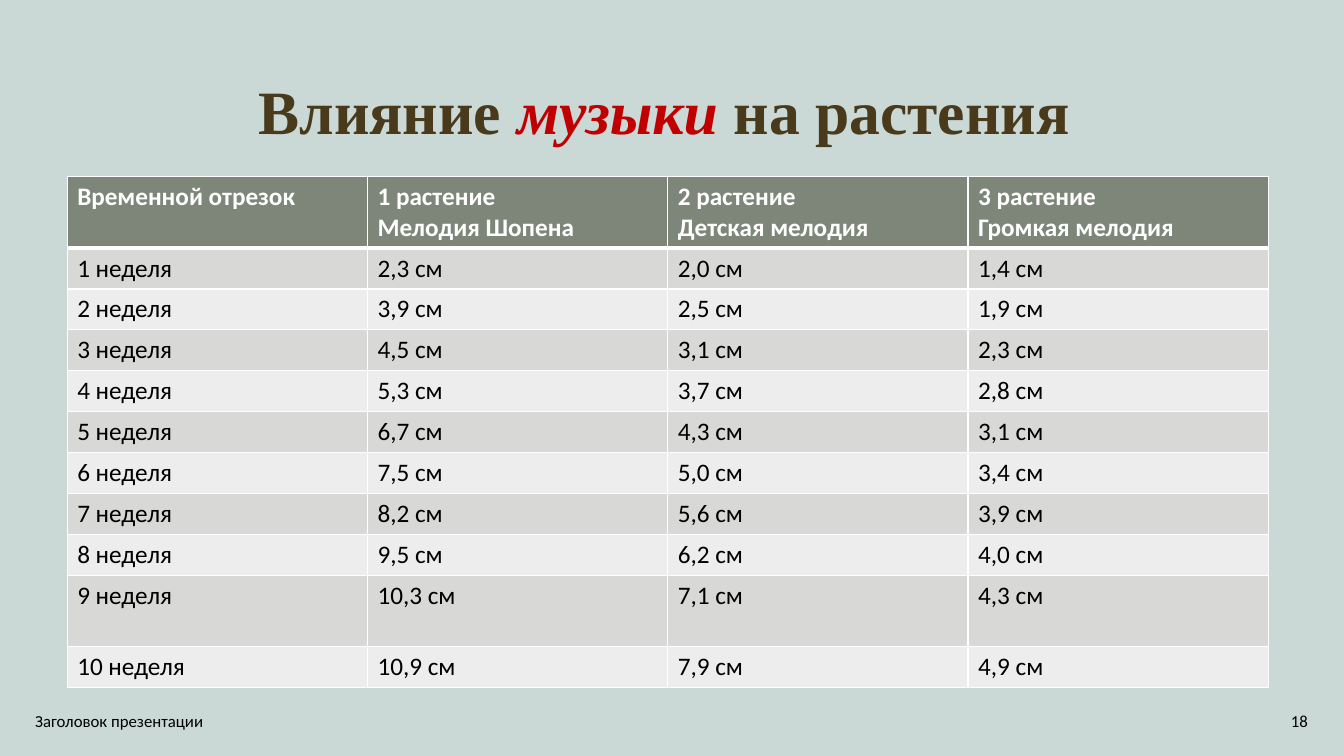
"""Build the slide about the influence of music on plant growth."""
import dataclasses

import lxml.etree
import pptx
import pptx.dml.color
import pptx.enum.text
import pptx.oxml.ns
import pptx.util

EMU_PER_PX = 9525
COLOURS = {
    "background": "CAD8D6",
    "title": "4A3A1C",
    "accent": "C00000",
    "header": "7E8679",
    "odd_row": "D8D9D7",
    "even_row": "ECEDEC",
    "white": "FFFFFF",
    "black": "000000",
}
ALIGN = pptx.enum.text.PP_ALIGN
MIDDLE = pptx.enum.text.MSO_ANCHOR.MIDDLE


@dataclasses.dataclass(frozen=True)
class Style:
    font: str
    size: int
    colour: str
    bold: bool = False
    italic: bool = False


@dataclasses.dataclass(frozen=True)
class Label:
    text: str
    left: int
    width: int
    align: ALIGN


TITLE = Style("Times New Roman", 44, "title", bold=True)
TITLE_SPANS = [
    ("Влияние ", TITLE),
    ("музыки ", dataclasses.replace(TITLE, colour="accent", italic=True)),
    ("на растения ", TITLE),
]
HEADER = Style("Calibri", 18, "white", bold=True)
BODY = Style("Calibri", 18, "black")
FOOTER = Style("Calibri", 12, "black")
LABELS = [
    Label("Заголовок презентации", 24, 432, ALIGN.LEFT),
    Label("18", 967, 288, ALIGN.RIGHT),
]
HEADINGS = [
    ["Временной отрезок"],
    ["1 растение", "Мелодия Шопена"],
    ["2 растение", "Детская мелодия"],
    ["3 растение", "Громкая мелодия"],
]
GROWTH = [
    ("2,3", "2,0", "1,4"),
    ("3,9", "2,5", "1,9"),
    ("4,5", "3,1", "2,3"),
    ("5,3", "3,7", "2,8"),
    ("6,7", "4,3", "3,1"),
    ("7,5", "5,0", "3,4"),
    ("8,2", "5,6", "3,9"),
    ("9,5", "6,2", "4,0"),
    ("10,3", "7,1", "4,3"),
    ("10,9", "7,9", "4,9"),
]
COLUMN_WIDTH = 286
ROW_HEIGHT = 39
TALL_ROW_HEIGHT = 68
TALL_ROWS = (0, 9)


def px(length: int) -> pptx.util.Emu:
    return pptx.util.Emu(length * EMU_PER_PX)


def rgb(name: str) -> pptx.dml.color.RGBColor:
    return pptx.dml.color.RGBColor.from_string(COLOURS[name])


def add_span(para, text: str, style: Style) -> None:
    span = para.add_run()
    span.text = text
    span.font.name = style.font
    span.font.size = pptx.util.Pt(style.size)
    span.font.bold = style.bold
    span.font.italic = style.italic
    span.font.color.rgb = rgb(style.colour)


def add_border(cell, side: str, points: int) -> None:
    qn = pptx.oxml.ns.qn
    line = lxml.etree.Element(qn(f"a:{side}"), w=str(pptx.util.Pt(points)))
    fill = lxml.etree.SubElement(line, qn("a:solidFill"))
    lxml.etree.SubElement(fill, qn("a:srgbClr"), val=COLOURS["white"])
    cell._tc.get_or_add_tcPr().append(line)


def fill_cell(cell, lines: list[str], style: Style, fill: str, top: int, bottom: int) -> None:
    for side, points in {"lnL": 1, "lnR": 1, "lnT": top, "lnB": bottom}.items():
        add_border(cell, side, points)
    cell.fill.solid()
    cell.fill.fore_color.rgb = rgb(fill)
    frame = cell.text_frame
    for index, line in enumerate(lines):
        para = frame.add_paragraph() if index else frame.paragraphs[0]
        add_span(para, line, style)


def add_title(page) -> None:
    title = page.shapes.title
    title.left, title.top, title.width, title.height = map(px, (88, 40, 1104, 139))
    title.text_frame.vertical_anchor = MIDDLE
    para = title.text_frame.paragraphs[0]
    para.alignment = ALIGN.CENTER
    para.line_spacing = 0.9
    for text, style in TITLE_SPANS:
        add_span(para, text, style)


def add_growth_table(page) -> None:
    weeks = [
        [[f"{week} неделя"]] + [[f"{value} см"] for value in values]
        for week, values in enumerate(GROWTH, 1)
    ]
    rows = [HEADINGS] + weeks
    heights = [TALL_ROW_HEIGHT if i in TALL_ROWS else ROW_HEIGHT for i in range(len(rows))]
    columns = len(HEADINGS)
    table = page.shapes.add_table(
        len(rows), columns, px(64), px(168), px(COLUMN_WIDTH * columns), px(sum(heights))
    ).table
    for column in table.columns:
        column.width = px(COLUMN_WIDTH)
    for index, cells in enumerate(rows):
        table.rows[index].height = px(heights[index])
        style = BODY if index else HEADER
        fill = ("odd_row" if index % 2 else "even_row") if index else "header"
        top = 3 if index == 1 else 1
        bottom = 1 if index else 3
        for column, lines in enumerate(cells):
            fill_cell(table.cell(index, column), lines, style, fill, top, bottom)


def add_label(page, label: Label) -> None:
    box = page.shapes.add_textbox(px(label.left), px(667), px(label.width), px(38))
    box.text_frame.word_wrap = True
    box.text_frame.vertical_anchor = MIDDLE
    para = box.text_frame.paragraphs[0]
    para.alignment = label.align
    add_span(para, label.text, FOOTER)


def main() -> None:
    deck = pptx.Presentation()
    deck.slide_width, deck.slide_height = px(1280), px(720)
    page = deck.slides.add_slide(deck.slide_layouts.get_by_name("Title Only"))
    page.background.fill.solid()
    page.background.fill.fore_color.rgb = rgb("background")
    add_title(page)
    add_growth_table(page)
    for label in LABELS:
        add_label(page, label)
    deck.save("out.pptx")


if __name__ == "__main__":
    main()
